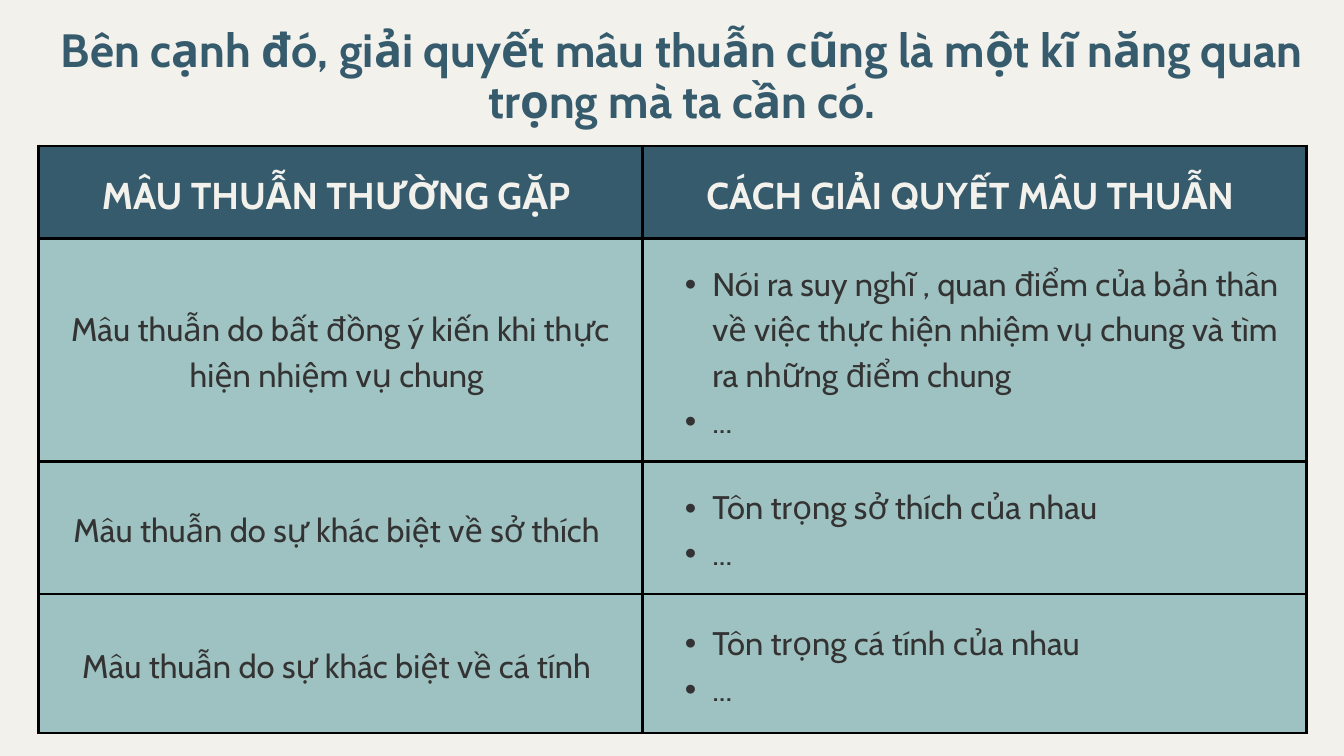
from lxml.etree import SubElement
from pptx import Presentation
from pptx.dml.color import RGBColor
from pptx.enum.text import MSO_ANCHOR, PP_ALIGN
from pptx.oxml.ns import qn
from pptx.util import Inches, Pt


def color(hex_string):
    return RGBColor.from_string(hex_string)


def add_text(paragraph, text, size, hex_string, bold, spacing, alignment):
    paragraph.alignment = alignment
    paragraph.line_spacing = Pt(spacing)
    paragraph.space_before = Pt(0)
    run = paragraph.add_run()
    run.text = text
    run.font.name = "Cabin"
    run.font.size = Pt(size)
    run.font.bold = bold
    run.font.color.rgb = color(hex_string)


CREAM, NAVY, TEAL, LIGHT_TEAL, INK = "F2F1EC", "365B6D", "9EC2C1", "A0C4C3", "343333"
CENTER, LEFT, JUSTIFY = PP_ALIGN.CENTER, PP_ALIGN.LEFT, PP_ALIGN.JUSTIFY

presentation = Presentation()
presentation.slide_width = Inches(20)
presentation.slide_height = Inches(11.25)
slide = presentation.slides.add_slide(presentation.slide_layouts[5])
slide.background.fill.solid()
slide.background.fill.fore_color.rgb = color(CREAM)

title = slide.shapes.title
title.left, title.top = Inches(0.89), Inches(0.38)
title.width, title.height = Inches(18.52), Inches(1.54)
frame = title.text_frame
frame.word_wrap = True
frame.vertical_anchor = MSO_ANCHOR.TOP
frame.margin_left = frame.margin_right = frame.margin_top = frame.margin_bottom = 0
add_text(
    frame.paragraphs[0],
    "Bên cạnh đó, giải quyết mâu thuẫn cũng là một kĩ năng quan trọng mà ta cần có.",
    50, NAVY, True, 55, CENTER,
)

conflicts = [
    ("MÂU THUẪN THƯỜNG GẶP ", ["CÁCH GIẢI QUYẾT MÂU THUẪN "], NAVY, CENTER),
    (
        "Mâu thuẫn do bất đồng ý kiến khi thực hiện nhiệm vụ chung ",
        [
            "Nói ra suy nghĩ , quan điểm của bản thân về việc thực hiện "
            "nhiệm vụ chung và tìm ra những điểm chung",
            "...",
        ],
        LIGHT_TEAL, LEFT,
    ),
    ("Mâu thuẫn do sự khác biệt về sở thích ", ["Tôn trọng sở thích của nhau", "..."], TEAL, LEFT),
    ("Mâu thuẫn do sự khác biệt về cá tính ", ["Tôn trọng cá tính của nhau ", "..."], TEAL, JUSTIFY),
]
column_widths = [8.99, 9.88]
row_heights = [1.38, 3.32, 1.97, 2.07]

table = slide.shapes.add_table(
    len(conflicts), 2, Inches(0.57), Inches(2.17), Inches(18.86), Inches(8.75)
).table
table.horz_banding = False
for column, width in zip(table.columns, column_widths):
    column.width = Inches(width)
for row, height in zip(table.rows, row_heights):
    row.height = Inches(height)

for row_index, (conflict, solutions, conflict_fill, solution_alignment) in enumerate(conflicts):
    is_header = row_index == 0
    size, spacing, ink = (40, 56, CREAM) if is_header else (35, 49, INK)
    contents = [
        ([conflict], conflict_fill, CENTER),
        (solutions, NAVY if is_header else TEAL, solution_alignment),
    ]
    for column_index, (lines, fill, alignment) in enumerate(contents):
        cell = table.cell(row_index, column_index)
        cell.vertical_anchor = MSO_ANCHOR.MIDDLE
        cell.margin_left = cell.margin_right = Inches(0.21)
        cell.margin_top = cell.margin_bottom = Inches(0.21)
        properties = cell._tc.get_or_add_tcPr()
        for side in ("lnL", "lnR", "lnT", "lnB"):
            border = SubElement(properties, qn(f"a:{side}"), w=str(Pt(3)))
            border_fill = SubElement(border, qn("a:solidFill"))
            SubElement(border_fill, qn("a:srgbClr"), val="000000")
        cell.fill.solid()
        cell.fill.fore_color.rgb = color(fill)

        frame = cell.text_frame
        for line_index, line in enumerate(lines):
            paragraph = frame.add_paragraph() if line_index else frame.paragraphs[0]
            if column_index == 1 and not is_header:
                paragraph.level = 1
                bullet_properties = paragraph._p.get_or_add_pPr()
                bullet_properties.set("marL", str(Inches(0.83)))
                bullet_properties.set("indent", str(Inches(-0.41)))
                SubElement(bullet_properties, qn("a:buFont"), typeface="Arial")
                SubElement(bullet_properties, qn("a:buChar"), char="•")
            add_text(paragraph, line, size, ink, is_header, spacing, alignment)

presentation.save("out.pptx")
